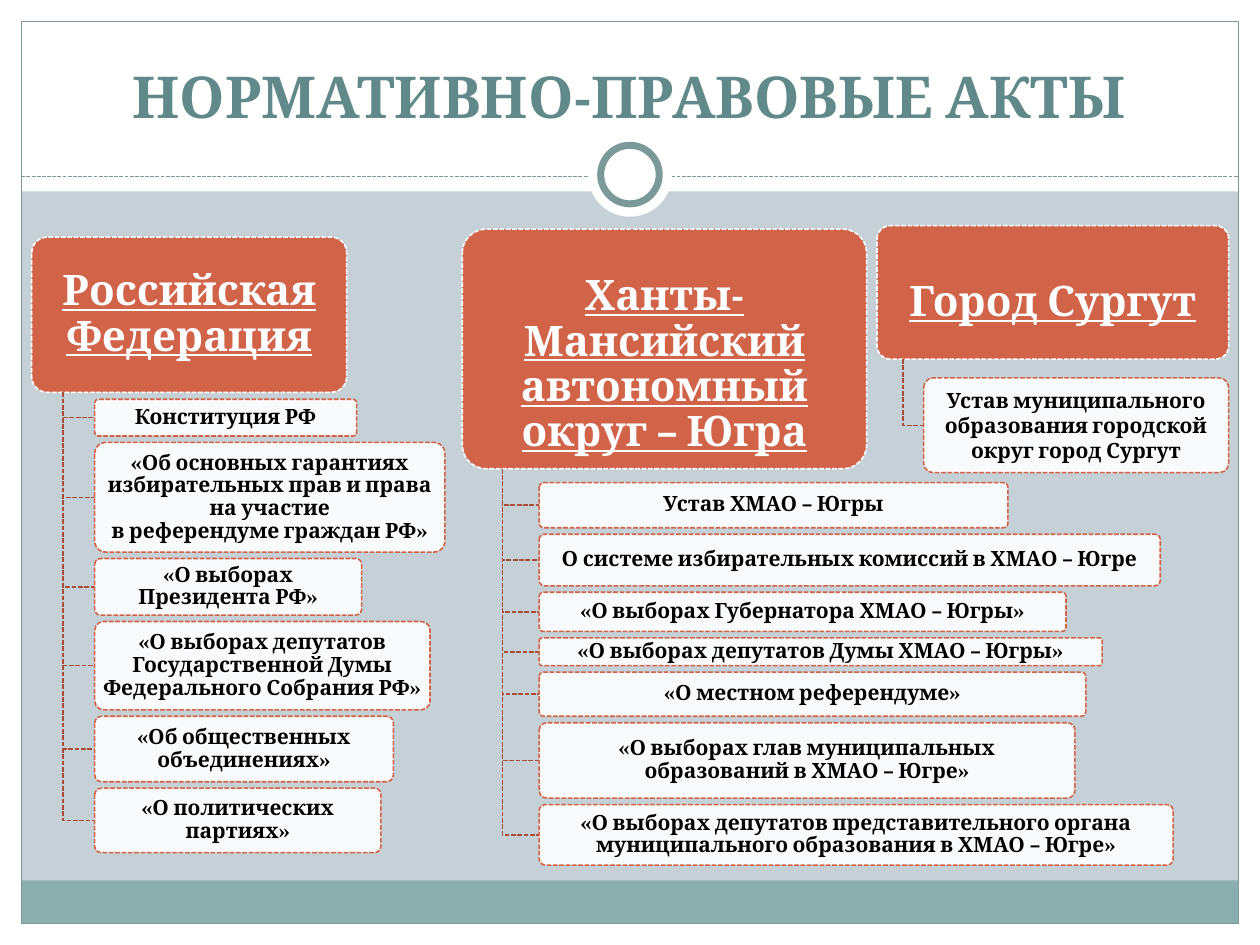
from dataclasses import dataclass

from lxml import etree
from pptx import Presentation
from pptx.dml.color import RGBColor
from pptx.enum.dml import MSO_LINE
from pptx.enum.shapes import MSO_CONNECTOR, MSO_SHAPE
from pptx.enum.text import MSO_ANCHOR, MSO_AUTO_SIZE, PP_ALIGN
from pptx.oxml.ns import qn
from pptx.util import Cm, Pt

DASH = MSO_LINE.SQUARE_DOT
RECTANGLE, ROUNDED, OVAL = MSO_SHAPE.RECTANGLE, MSO_SHAPE.ROUNDED_RECTANGLE, MSO_SHAPE.OVAL
STRAIGHT = MSO_CONNECTOR.STRAIGHT
MIDDLE, BOTTOM = MSO_ANCHOR.MIDDLE, MSO_ANCHOR.BOTTOM
CENTER = PP_ALIGN.CENTER
NO_AUTOFIT = MSO_AUTO_SIZE.NONE


@dataclass(frozen=True)
class Theme:
    """Colours, font and type sizes of the slide."""
    background: str = "C5D1D7"
    white: str = "FFFFFF"
    footer: str = "8CADAE"
    frame: str = "7C999A"
    title: str = "61898A"
    accent: str = "D16349"
    branch: str = "A74F3A"
    text: str = "000000"
    font: str = "Cambria"
    title_size: float = 33
    heading_size: float = 24
    card_size: float = 12
    thin: float = 0.75
    outline: float = 0.9


THEME = Theme()
CARD_GAP = 0.13

FEDERAL_ACTS = [
    ("Конституция РФ", 5.28, 0.74),
    ("«Об основных гарантиях избирательных прав и права на участие\vв референдуме граждан РФ»", 7.06, 2.21),
    ("«О выборах Президента РФ»", 5.38, 1.14),
    ("«О выборах депутатов Государственной Думы Федерального Собрания РФ»", 6.76, 1.78),
    ("«Об общественных объединениях»", 6.02, 1.32),
    ("«О политических партиях»", 5.77, 1.3),
]
REGIONAL_ACTS = [
    ("Устав ХМАО – Югры", 9.45, 0.91),
    ("О системе избирательных комиссий в ХМАО – Югре", 12.52, 1.04),
    ("«О выборах Губернатора ХМАО – Югры»", 10.62, 0.79),
    ("«О выборах депутатов Думы ХМАО – Югры»", 11.35, 0.56),
    ("«О местном референдуме»", 11.02, 0.89),
    ("«О выборах глав муниципальных образований в ХМАО – Югре»", 10.8, 1.52),
    ("«О выборах депутатов представительного органа муниципального образования в ХМАО – Югре»", 12.78, 1.22),
]
CITY_ACTS = [("Устав муниципального образования городской округ город Сургут", 6.15, 1.91)]


def write_text(shape, text, *, size, color, underline=None, spacing=0.9,
               anchor=MIDDLE, margins=(0.08, 0.05, 0.08, 0.05)):
    """Write centred bold text; margins are left, top, right, bottom."""
    frame = shape.text_frame
    frame.word_wrap = True
    frame.auto_size = NO_AUTOFIT
    frame.vertical_anchor = anchor
    frame.margin_left, frame.margin_top, frame.margin_right, frame.margin_bottom = map(Cm, margins)
    paragraph = frame.paragraphs[0]
    paragraph.text = text
    paragraph.alignment = CENTER
    paragraph.line_spacing = spacing
    for run in paragraph.runs:
        run.font.name = THEME.font
        run.font.size = Pt(size)
        run.font.bold = True
        run.font.underline = underline
        run.font.color.rgb = RGBColor.from_string(color)


def style_line(line, color, width, dash=None):
    """Set the colour, width and dash of a line."""
    line.color.rgb = RGBColor.from_string(color)
    line.width = Pt(width)
    if dash is not None:
        line.dash_style = dash


def add_box(slide, kind, box, fill=None, line=None, width=THEME.thin, dash=None):
    """Add a preset shape; no fill or line colour means none is drawn."""
    shape = slide.shapes.add_shape(kind, *map(Cm, box))
    shape.shadow.inherit = False
    if fill:
        shape.fill.solid()
        shape.fill.fore_color.rgb = RGBColor.from_string(fill)
    else:
        shape.fill.background()
    if line:
        style_line(shape.line, line, width, dash)
    else:
        shape.line.fill.background()
    return shape


def add_rounded(slide, box, fill, line):
    """Add a dashed box with slightly rounded corners."""
    shape = add_box(slide, ROUNDED, box, fill, line, THEME.outline, DASH)
    shape.adjustments[0] = 0.1
    return shape


def add_heading(slide, box, text, top_margin):
    """Add the heading of a column."""
    shape = add_rounded(slide, box, THEME.accent, THEME.white)
    write_text(shape, text, size=THEME.heading_size, color=THEME.white, underline=True,
               margins=(0.1, top_margin, 0.1, 0.08))


def add_card(slide, box, text, spacing):
    """Add a translucent card that names one act."""
    shape = add_rounded(slide, box, THEME.white, THEME.accent)
    color = shape.element.spPr.find(qn("a:solidFill"))[0]
    etree.SubElement(color, qn("a:alpha"), val="90000")
    write_text(shape, text, size=THEME.card_size, color=THEME.text, spacing=spacing)


def add_branch(slide, trunk, top, left, middle):
    """Add an elbow line from a heading to a card."""
    builder = slide.shapes.build_freeform(Cm(trunk), Cm(top))
    builder.add_line_segments([(Cm(trunk), Cm(middle)), (Cm(left), Cm(middle))], close=False)
    shape = builder.convert_to_shape()
    shape.shadow.inherit = False
    shape.fill.background()
    style_line(shape.line, THEME.branch, THEME.outline, DASH)


def add_column(slide, heading, heading_box, acts, *, trunk, left, top, top_margin, spacing=0.9):
    """Add a heading with its stack of connected cards."""
    add_heading(slide, heading_box, heading, top_margin)
    branch_top = heading_box[1] + heading_box[3]
    for text, width, height in acts:
        add_branch(slide, trunk, branch_top, left, top + height / 2)
        add_card(slide, (left, top, width, height), text, spacing)
        top += height + CARD_GAP


def add_frame(slide):
    """Add the white margins, footer band, border, rule and ring."""
    slide.background.fill.solid()
    slide.background.fill.fore_color.rgb = RGBColor.from_string(THEME.background)
    for box in ((0, 18.62, 25.4, 0.43), (0, 0, 25.4, 3.86), (0, 0, 0.43, 19.05), (24.97, 0, 0.43, 19.05)):
        add_box(slide, RECTANGLE, box, THEME.white)
    add_box(slide, RECTANGLE, (0.43, 17.75, 24.54, 0.87), THEME.footer)
    add_box(slide, RECTANGLE, (0.43, 0.43, 24.54, 18.19), line=THEME.frame)
    rule = slide.shapes.add_connector(STRAIGHT, Cm(0.43), Cm(3.56), Cm(24.97), Cm(3.56))
    style_line(rule.line, THEME.frame, THEME.thin, DASH)
    etree.SubElement(rule.element.spPr, qn("a:effectLst"))
    add_box(slide, OVAL, (11.85, 2.67, 1.7, 1.7), THEME.white)
    add_box(slide, OVAL, (12.11, 2.93, 1.18, 1.18), THEME.white, THEME.frame, 4)


def add_title(slide, text):
    """Move the title placeholder to the front and fill it."""
    title = slide.shapes.title
    title.left, title.top, title.width, title.height = map(Cm, (0.84, 0.64, 23.7, 2.11))
    title.element.getparent().append(title.element)
    write_text(title, text, size=THEME.title_size, color=THEME.title, spacing=1,
               anchor=BOTTOM, margins=(0.25, 0.13, 0.25, 0.13))


def main():
    """Build and save the slide."""
    presentation = Presentation()
    presentation.slide_width, presentation.slide_height = Cm(25.4), Cm(19.05)
    slide = presentation.slides.add_slide(presentation.slide_layouts[5])
    add_frame(slide)
    add_title(slide, "НОРМАТИВНО-ПРАВОВЫЕ АКТЫ")
    add_column(slide, "Российская Федерация", (0.64, 4.78, 6.35, 3.13), FEDERAL_ACTS,
               trunk=1.27, left=1.91, top=8.05, top_margin=0.08)
    add_column(slide, "Ханты-Мансийский автономный округ – Югра", (9.32, 4.62, 8.15, 4.83), REGIONAL_ACTS,
               trunk=10.13, left=10.87, top=9.73, top_margin=0.73)
    add_column(slide, "Город Сургут", (17.68, 4.55, 7.09, 2.69), CITY_ACTS,
               trunk=18.21, left=18.62, top=7.62, top_margin=0.52, spacing=1)
    presentation.save("out.pptx")


if __name__ == "__main__":
    main()
